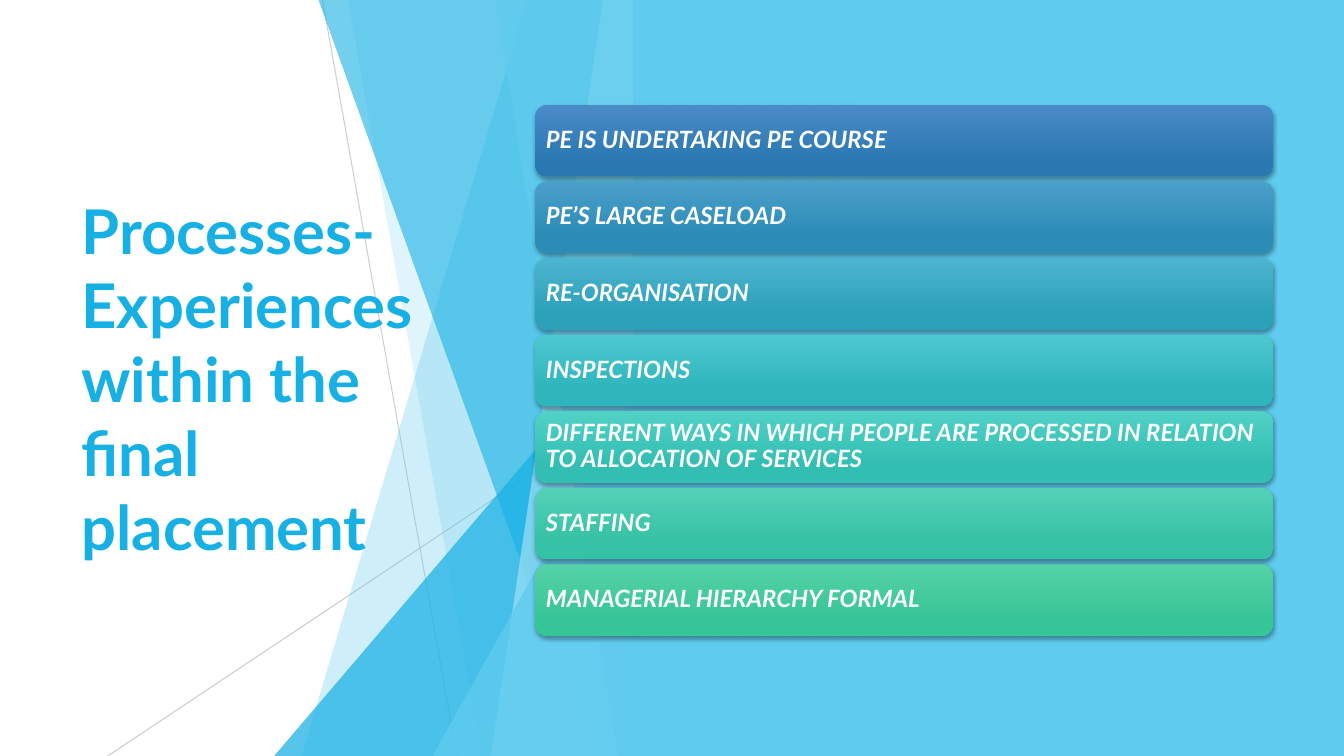
from dataclasses import dataclass

import pptx
import pptx.dml.color
import pptx.enum.dml
import pptx.enum.shapes
import pptx.enum.text
import pptx.oxml
import pptx.oxml.ns
import pptx.util

WIDTH, HEIGHT = pptx.util.Inches(13.33), pptx.util.Inches(7.5)
FONT = "Lato"
COLORS = {
    "sky": "5FCBEF",
    "blue": "17B0E4",
    "pale": "9FE0F5",
    "grey": "BFBFBF",
    "white": "FFFFFF",
    "shadow": "000000",
}
A_NS = pptx.oxml.ns.nsdecls("a")

# Positions are percentages of the slide's width (x) and height (y).
EDGE = 47.1  # where the facets meet the solid panel
BAR_LEFT, BAR_TOP, BAR_WIDTH, BAR_HEIGHT = 39.83, 13.87, 54.91, 9.47
BAR_PITCH = 10.13


@dataclass
class Ray:
    x1: float
    y1: float
    x2: float
    alpha: int


@dataclass
class Facet:
    """Full-height band from a slanted left side to EDGE."""
    top_x: float
    bottom_x: float
    color: str
    alpha: int


@dataclass
class Wedge:
    """Right triangle standing on the slide's bottom, upright side at EDGE."""
    left: float
    top: float
    color: str
    alpha: int


@dataclass
class Bar:
    text: str
    start: str
    end: str


RAYS = [Ray(24, 0, 34, 75), Ray(EDGE, 53.73, 8.02, 80)]
FACETS = [
    Facet(39.23, 22.43, "sky", 30),
    Facet(25.88, 35.86, "sky", 20),
    Wedge(20.4, 44.4, "blue", 72),
    Facet(23.7, 43.96, "blue", 60),
    Facet(44.86, 36.53, "pale", 70),
    Facet(36.83, 45.98, "sky", 65),
    Wedge(32.18, 52.4, "sky", 80),
]
BARS = [
    Bar("PE IS UNDERTAKING PE COURSE", "4A8BC6", "2A78B2"),
    Bar("PE’S LARGE CASELOAD", "4B9FCA", "2B8CB6"),
    Bar("RE-ORGANISATION", "4CB4CE", "2DA1BA"),
    Bar("INSPECTIONS", "4DC8D0", "2FB5BC"),
    Bar("DIFFERENT WAYS IN WHICH PEOPLE ARE PROCESSED IN RELATION "
        "TO ALLOCATION OF SERVICES", "50D1C6", "33BEB3"),
    Bar("STAFFING", "53D1B6", "35C1A5"),
    Bar("MANAGERIAL HIERARCHY FORMAL", "56D2A7", "36C596"),
]


def x(share: float) -> int:
    return round(WIDTH * share / 100)


def y(share: float) -> int:
    return round(HEIGHT * share / 100)


def rgb(value: str) -> pptx.dml.color.RGBColor:
    return pptx.dml.color.RGBColor.from_string(value)


def set_alpha(sp, alpha: int) -> None:
    """Make the first colour of a shape or line partly transparent."""
    clr = sp._element.spPr.find(".//" + pptx.oxml.ns.qn("a:srgbClr"))
    clr.append(pptx.oxml.parse_xml(f'<a:alpha {A_NS} val="{alpha * 1000}"/>'))


def paint(sp, color: str, alpha: int = 100) -> None:
    sp.shadow.inherit = False
    sp.line.fill.background()
    sp.fill.solid()
    sp.fill.fore_color.rgb = rgb(COLORS[color])
    if alpha < 100:
        set_alpha(sp, alpha)


def style_text(tf, text: str, size: int, color: str, italic: bool = False) -> None:
    tf.text = text
    tf.word_wrap = True
    tf.vertical_anchor = pptx.enum.text.MSO_ANCHOR.MIDDLE
    p = tf.paragraphs[0]
    p.alignment = pptx.enum.text.PP_ALIGN.LEFT
    f = p.runs[0].font
    f.name, f.size, f.bold, f.italic = FONT, pptx.util.Pt(size), True, italic
    f.color.rgb = rgb(COLORS[color])


def draw_ray(s, ray: Ray) -> None:
    line = s.shapes.add_connector(pptx.enum.shapes.MSO_CONNECTOR.STRAIGHT,
                                  x(ray.x1), y(ray.y1), x(ray.x2), HEIGHT)
    line.line.width = pptx.util.Pt(0.75)
    line.line.color.rgb = rgb(COLORS["grey"])
    set_alpha(line, ray.alpha)
    line._element.spPr.append(pptx.oxml.parse_xml(f"<a:effectLst {A_NS}/>"))


def draw_facet(s, facet: Facet) -> None:
    fb = s.shapes.build_freeform(x(facet.top_x), 0)
    fb.add_line_segments([(x(EDGE), 0), (x(EDGE), HEIGHT), (x(facet.bottom_x), HEIGHT)])
    paint(fb.convert_to_shape(), facet.color, facet.alpha)


def draw_wedge(s, wedge: Wedge) -> None:
    sp = s.shapes.add_shape(pptx.enum.shapes.MSO_SHAPE.ISOSCELES_TRIANGLE,
                            x(wedge.left), y(wedge.top),
                            x(EDGE - wedge.left), y(100 - wedge.top))
    sp.adjustments[0] = 1
    paint(sp, wedge.color, wedge.alpha)


def draw_bar(s, bar: Bar, row: int) -> None:
    sp = s.shapes.add_shape(pptx.enum.shapes.MSO_SHAPE.ROUNDED_RECTANGLE,
                            x(BAR_LEFT), y(BAR_TOP + row * BAR_PITCH),
                            x(BAR_WIDTH), y(BAR_HEIGHT))
    sp.line.fill.background()
    sp.fill.gradient()
    sp.fill.gradient_angle = 270
    for stop, color, position in zip(sp.fill.gradient_stops, (bar.start, bar.end), (0, 0.78)):
        stop.color.rgb = rgb(color)
        stop.position = position
    sp._element.spPr.append(pptx.oxml.parse_xml(
        f'<a:effectLst {A_NS}><a:outerShdw blurRad="{pptx.util.Pt(3)}" '
        f'dist="{pptx.util.Pt(2)}" dir="5400000" rotWithShape="0">'
        f'<a:srgbClr val="{COLORS["shadow"]}"><a:alpha val="35000"/></a:srgbClr>'
        "</a:outerShdw></a:effectLst>"))
    tf = sp.text_frame
    style_text(tf, bar.text, 17, "white", italic=True)
    tf.paragraphs[0].line_spacing = 0.9
    tf.margin_left = tf.margin_right = tf.margin_top = tf.margin_bottom = pptx.util.Inches(0.07)


def main() -> None:
    prs = pptx.Presentation()
    prs.slide_width, prs.slide_height = WIDTH, HEIGHT
    s = prs.slides.add_slide(prs.slide_layouts[6])

    for ray in RAYS:
        draw_ray(s, ray)
    for item in FACETS:
        if isinstance(item, Wedge):
            draw_wedge(s, item)
        else:
            draw_facet(s, item)

    title = s.shapes.add_textbox(x(5.33), y(20.13), x(29.1), y(59.73))
    style_text(title.text_frame, "Processes- Experiences within the final placement", 44, "blue")

    panel = s.shapes.add_shape(pptx.enum.shapes.MSO_SHAPE.RECTANGLE,
                               x(EDGE), 0, x(100 - EDGE), HEIGHT)
    paint(panel, "sky")
    for row, bar in enumerate(BARS):
        draw_bar(s, bar, row)

    prs.save("out.pptx")


if __name__ == "__main__":
    main()
